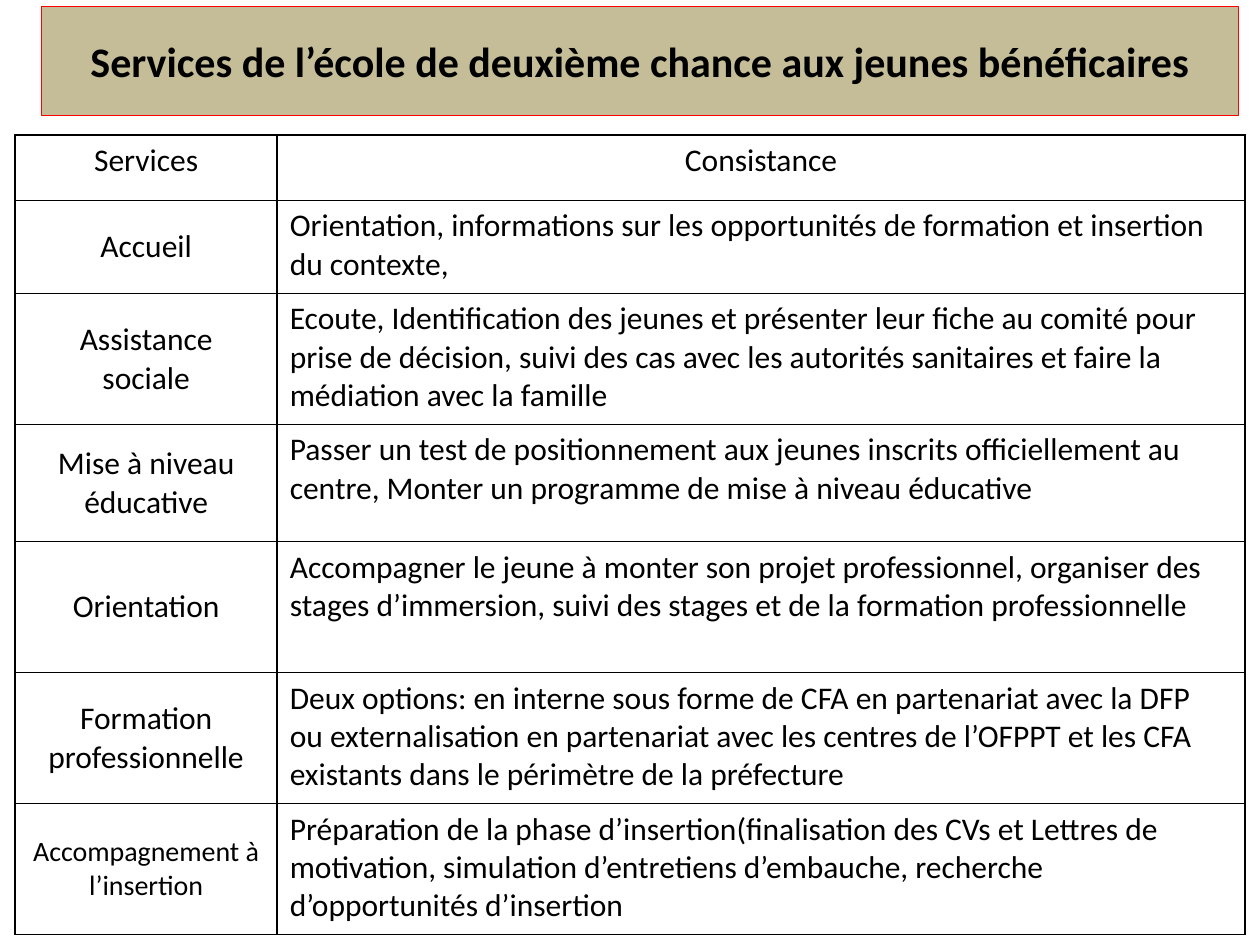
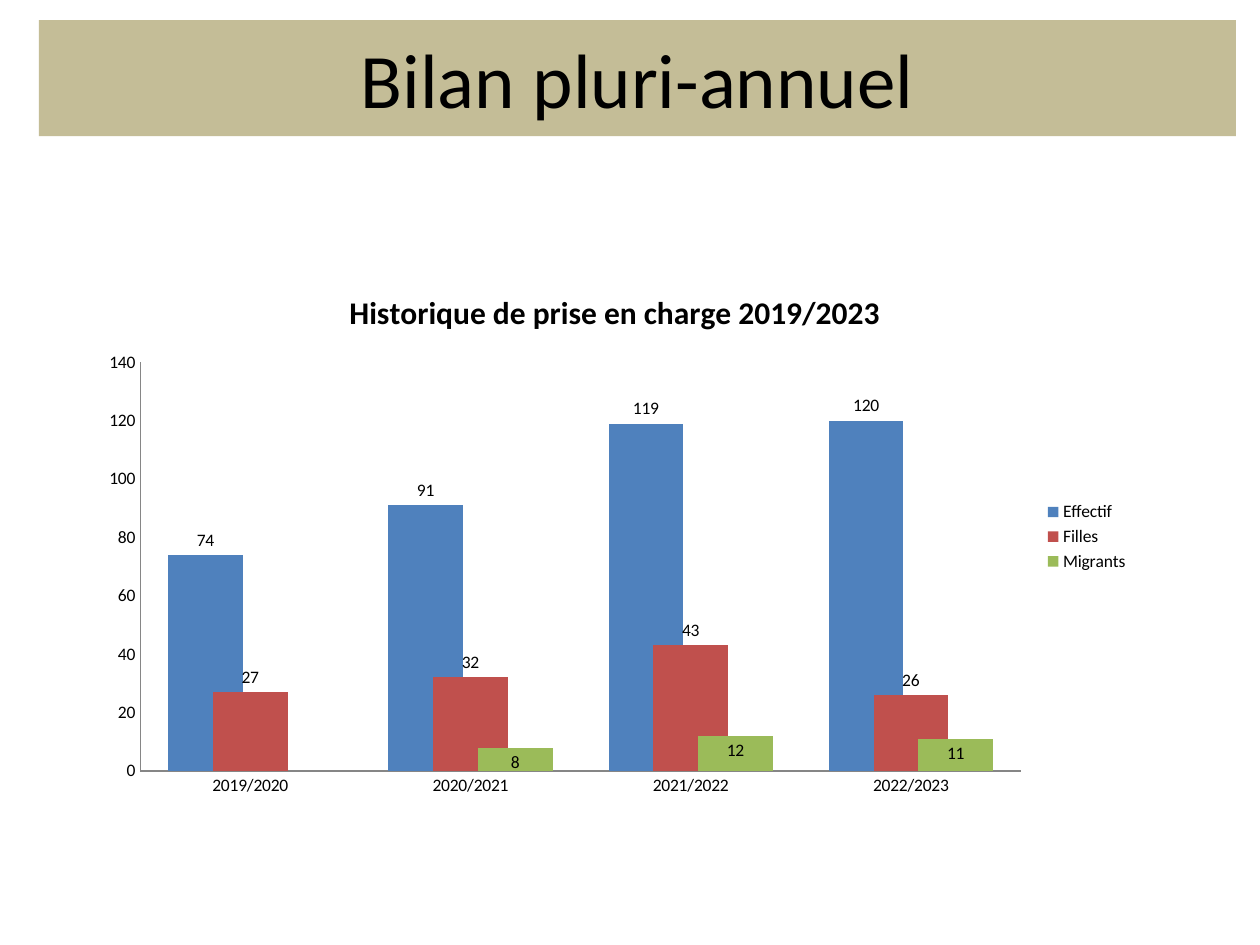
import pptx
import pptx.chart.data
import pptx.dml.color
import pptx.enum.chart
import pptx.enum.shapes
import pptx.enum.text
import pptx.oxml.ns
import pptx.util
from lxml import etree

Inches, Pt = pptx.util.Inches, pptx.util.Pt
RGBColor = pptx.dml.color.RGBColor
ALIGN = pptx.enum.text.PP_ALIGN
MIDDLE = pptx.enum.text.MSO_ANCHOR.MIDDLE
LABEL_POS = pptx.enum.chart.XL_LABEL_POSITION

FONT = "Calibri"
BLACK = RGBColor(0, 0, 0)
WHITE = RGBColor(255, 255, 255)
SAND = RGBColor(0xC4, 0xBD, 0x97)
RED = RGBColor(255, 0, 0)
GREY = RGBColor(0x86, 0x86, 0x86)
BLUE = RGBColor(0x4F, 0x81, 0xBD)
BRICK = RGBColor(0xC0, 0x50, 0x4D)
GREEN = RGBColor(0x9B, 0xBB, 0x59)


def style_font(font, size, bold=False):
    font.name, font.size, font.bold = FONT, Pt(size), bold
    font.color.rgb = BLACK


def add_titled_slide(title, left, top, height, size, bold=False, line=None):
    s = prs.slides.add_slide(prs.slide_layouts[6])
    sp = s.shapes.add_shape(pptx.enum.shapes.MSO_SHAPE.RECTANGLE, Inches(left),
                            Inches(top), Inches(9.5), Inches(height))
    sp.shadow.inherit = False
    sp.fill.solid()
    sp.fill.fore_color.rgb = SAND
    if line is None:
        sp.line.fill.background()
    else:
        sp.line.color.rgb = line
        sp.line.width = Pt(0.75)
    tf = sp.text_frame
    tf.word_wrap = True
    tf.vertical_anchor = MIDDLE
    p = tf.paragraphs[0]
    p.text = title
    p.alignment = ALIGN.CENTER
    style_font(p.font, size, bold)
    return s


prs = pptx.Presentation()
prs.slide_width, prs.slide_height = Inches(10), Inches(7.5)

# Slide 1: table of services
s = add_titled_slide("Services de l’école de deuxième chance aux jeunes bénéficaires",
                     0.33, 0.05, 0.87, 24, bold=True, line=RED)
# Row height, service, description; a line break starts a new paragraph
services = [
    (0.52, "Services", "Consistance"),
    (0.74, "Accueil",
     "Orientation, informations sur les opportunités de formation et insertion du contexte,"),
    (1.04, "Assistance\nsociale",
     "Ecoute, Identification des jeunes et présenter leur fiche au comité pour prise de "
     "décision, suivi des cas avec les autorités sanitaires et faire la médiation avec "
     "la famille"),
    (0.93, "Mise à niveau éducative",
     "Passer un test de positionnement aux jeunes inscrits officiellement au centre, "
     "Monter un programme de mise à niveau éducative"),
    (1.04, "Orientation",
     "Accompagner le jeune à monter son projet professionnel, organiser des stages "
     "d’immersion, suivi des stages et de la formation professionnelle"),
    (1.04, "Formation professionnelle",
     "Deux options: en interne sous forme de CFA en partenariat avec la DFP\n"
     "ou externalisation en partenariat avec les centres de l’OFPPT et les CFA existants "
     "dans le périmètre de la préfecture"),
    (1.04, "Accompagnement à l’insertion",
     "Préparation de la phase d’insertion(finalisation des CVs et Lettres de motivation, "
     "simulation d’entretiens d’embauche, recherche d’opportunités d’insertion"),
]
table = s.shapes.add_table(len(services), 2, Inches(0.12), Inches(1.07),
                           Inches(9.76), Inches(6.35)).table
for column, width in zip(table.columns, (2.08, 7.68)):
    column.width = Inches(width)
last = len(services) - 1
for i, (height, *texts) in enumerate(services):
    table.rows[i].height = Inches(height)
    for j, text in enumerate(texts):
        cell = table.cell(i, j)
        cell.text = text
        if i > 0 and j == 0:
            cell.vertical_anchor = MIDDLE
        for p in cell.text_frame.paragraphs:
            p.alignment = ALIGN.CENTER if i == 0 or j == 0 else ALIGN.LEFT
            style_font(p.font, 16 if (i, j) == (last, 0) else 18)
        # Borders come before the fill in the cell properties
        tc_pr = cell._tc.get_or_add_tcPr()
        for side in ("a:lnL", "a:lnR", "a:lnT", "a:lnB"):
            ln = etree.SubElement(tc_pr, pptx.oxml.ns.qn(side), w=str(Pt(1)))
            fill = etree.SubElement(ln, pptx.oxml.ns.qn("a:solidFill"))
            etree.SubElement(fill, pptx.oxml.ns.qn("a:srgbClr"), val=str(BLACK))
        cell.fill.solid()
        cell.fill.fore_color.rgb = WHITE

# Slide 2: column chart over four school years
s = add_titled_slide("Bilan pluri-annuel", 0.31, 0.16, 0.92, 44)
series_rows = [
    ("Effectif", (74, 91, 119, 120), BLUE, LABEL_POS.OUTSIDE_END),
    ("Filles", (27, 32, 43, 26), BRICK, LABEL_POS.OUTSIDE_END),
    ("Migrants", (None, 8, 12, 11), GREEN, LABEL_POS.INSIDE_END),
]
data = pptx.chart.data.CategoryChartData()
data.categories = ["2019/2020", "2020/2021", "2021/2022", "2022/2023"]
for name, values, _, _ in series_rows:
    data.add_series(name, values)
chart = s.shapes.add_chart(pptx.enum.chart.XL_CHART_TYPE.COLUMN_CLUSTERED, Inches(0.7),
                           Inches(2.12), Inches(8.36), Inches(4.28), data).chart
style_font(chart.font, 10)

# Chart title and legend
chart.has_title = True
p = chart.chart_title.text_frame.paragraphs[0]
p.text = "Historique de prise en charge 2019/2023"
style_font(p.font, 18, bold=True)
chart.has_legend = True
chart.legend.position = pptx.enum.chart.XL_LEGEND_POSITION.RIGHT
chart.legend.include_in_layout = False

# Axes
for axis in (chart.category_axis, chart.value_axis):
    axis.has_major_gridlines = False
    axis.major_tick_mark = pptx.enum.chart.XL_TICK_MARK.NONE
    axis.format.line.color.rgb = GREY
    axis.format.line.width = Pt(0.75)
chart.value_axis.minimum_scale = 0
chart.value_axis.maximum_scale = 140
chart.value_axis.major_unit = 20

# Columns and their value labels
plot = chart.plots[0]
plot.gap_width = 75
plot.overlap = 40
plot.vary_by_categories = False
for series, (_, _, color, position) in zip(plot.series, series_rows):
    series.format.fill.solid()
    series.format.fill.fore_color.rgb = color
    labels = series.data_labels
    labels.show_value = True
    labels.position = position
    style_font(labels.font, 10)

prs.save("out.pptx")
